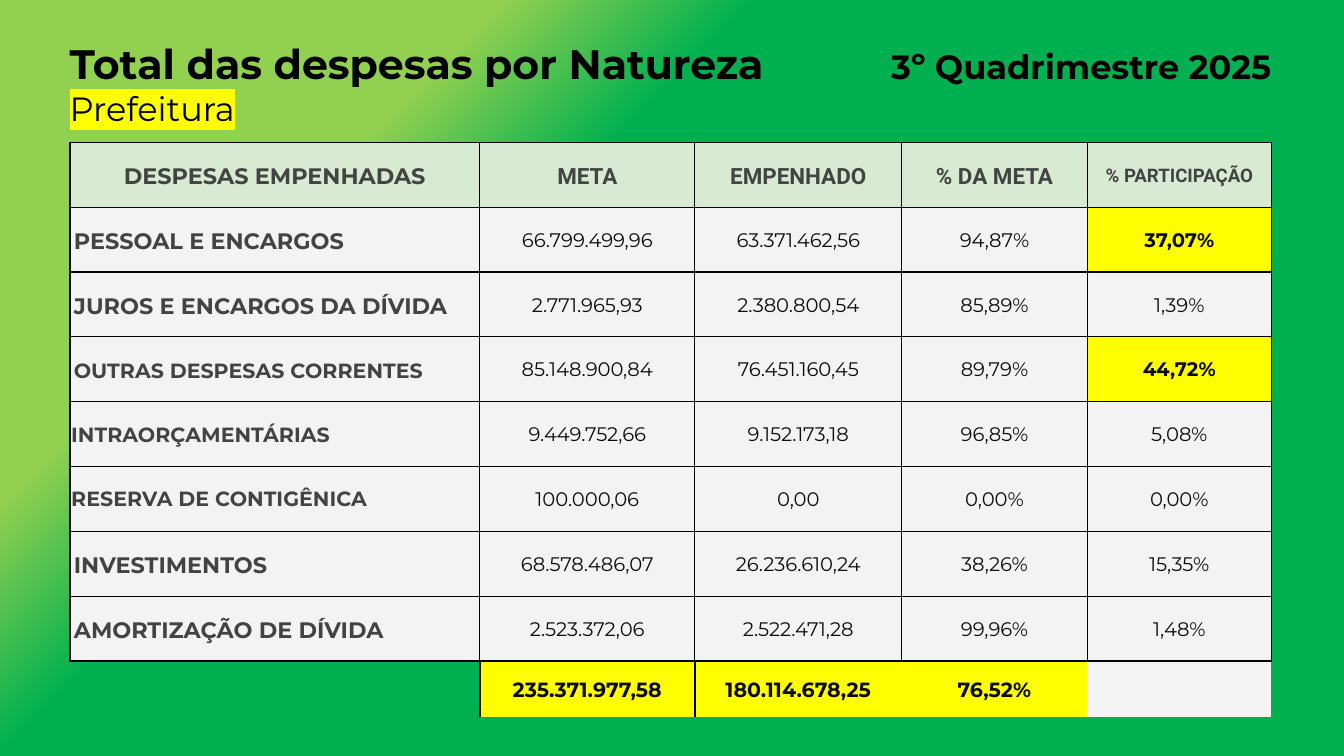
from lxml import etree
from pptx import Presentation
from pptx.dml.color import RGBColor
from pptx.enum.text import MSO_ANCHOR, PP_ALIGN
from pptx.oxml.ns import qn
from pptx.util import Inches, Pt

CENTER, LEFT = PP_ALIGN.CENTER, PP_ALIGN.LEFT
MIDDLE, BOTTOM = MSO_ANCHOR.MIDDLE, MSO_ANCHOR.BOTTOM

TITLE = "Total das despesas por Natureza"
PERIOD = "3º Quadrimestre 2025"
ENTITY = "Prefeitura"

HEADER = ["DESPESAS EMPENHADAS", "META", "EMPENHADO", "% DA META", "% PARTICIPAÇÃO"]
EXPENSES = [
    ("PESSOAL E ENCARGOS", "66.799.499,96", "63.371.462,56", "94,87%", "37,07%"),
    ("JUROS E ENCARGOS DA DÍVIDA", "2.771.965,93", "2.380.800,54", "85,89%", "1,39%"),
    ("OUTRAS DESPESAS CORRENTES", "85.148.900,84", "76.451.160,45", "89,79%", "44,72%"),
    ("INTRAORÇAMENTÁRIAS", "9.449.752,66", "9.152.173,18", "96,85%", "5,08%"),
    ("RESERVA DE CONTIGÊNICA", "100.000,06", "0,00", "0,00%", "0,00%"),
    ("INVESTIMENTOS", "68.578.486,07", "26.236.610,24", "38,26%", "15,35%"),
    ("AMORTIZAÇÃO DE DÍVIDA", "2.523.372,06", "2.522.471,28", "99,96%", "1,48%"),
]
TOTALS = ["", "235.371.977,58", "180.114.678,25", "76,52%", ""]
HIGHLIGHTED = {"37,07%", "44,72%"}
SMALL_LABELS = {"OUTRAS DESPESAS CORRENTES", "INTRAORÇAMENTÁRIAS", "RESERVA DE CONTIGÊNICA"}
TIGHT_LABELS = {"INTRAORÇAMENTÁRIAS", "RESERVA DE CONTIGÊNICA"}

COL_WIDTHS = [3.05, 1.6, 1.54, 1.38, 1.37]
TABLE_HEIGHT, TOTAL_HEIGHT = 4.28, 0.42
LOOSE, TIGHT = (0.03, 0.02, 0.03, 0.02), (0.01, 0.01, 0.01, 0)

THEME = {
    "font": "Montserrat", "head_font": "Roboto",
    "black": "000000", "label": "434343", "value": "0D0D0D",
    "lime": "92D050", "green": "00B050", "yellow": "FFFF00",
    "head_fill": "D9EAD3", "cell_fill": "F3F3F3",
    "title": 22, "period": 18, "head": 12, "head_small": 10,
    "label_size": 12, "label_small": 11, "value_size": 10.5, "total": 11,
}


def rgb(name):
    return RGBColor.from_string(THEME[name])


def add_run(p, text, size, color="black", bold=False, font="font", mark=False):
    r = p.add_run()
    r.text = text
    f = r.font
    f.size, f.bold, f.name = Pt(THEME[size]), bold, THEME[font]
    f.color.rgb = rgb(color)
    if mark:
        highlight = etree.Element(qn("a:highlight"))
        etree.SubElement(highlight, qn("a:srgbClr"), val=THEME["yellow"])
        r._r.rPr.find(qn("a:solidFill")).addnext(highlight)


def set_borders(cell, widths):
    tc_pr = cell._tc.get_or_add_tcPr()
    for i, side in enumerate("LRTB"):
        width = widths.get(side, 0)
        ln = etree.Element(qn(f"a:ln{side}"), w=str(Pt(width)))
        if width:
            fill = etree.SubElement(ln, qn("a:solidFill"))
            etree.SubElement(fill, qn("a:srgbClr"), val=THEME["black"])
        else:
            etree.SubElement(ln, qn("a:noFill"))
        tc_pr.insert(i, ln)


def fill_cell(cell, text, margins, fill, borders, align=CENTER, spacing=None, **style):
    cell.margin_left, cell.margin_top, cell.margin_right, cell.margin_bottom = map(Inches, margins)
    cell.vertical_anchor = MIDDLE
    if fill:
        cell.fill.solid()
        cell.fill.fore_color.rgb = rgb(fill)
    else:
        cell.fill.background()
    set_borders(cell, borders)
    p = cell.text_frame.paragraphs[0]
    p.alignment = align
    if spacing:
        p.line_spacing = spacing
    if text:
        add_run(p, text, **style)


def add_title(s):
    tf = s.shapes.add_textbox(Inches(0.42), Inches(0.19), Inches(9.25), Inches(0.81)).text_frame
    tf.word_wrap = True
    tf.vertical_anchor = BOTTOM
    p = tf.paragraphs[0]
    tabs = etree.SubElement(p._p.get_or_add_pPr(), qn("a:tabLst"))
    etree.SubElement(tabs, qn("a:tab"), pos=str(Inches(8.94)), algn="r")
    add_run(p, TITLE + "\t", "title", bold=True)
    add_run(p, PERIOD, "period", bold=True)
    p.add_line_break()
    add_run(p, ENTITY, "period", mark=True)


def add_expense_table(s):
    body_rows = len(EXPENSES) + 1
    heights = [(TABLE_HEIGHT - TOTAL_HEIGHT) / body_rows] * body_rows + [TOTAL_HEIGHT]
    table = s.shapes.add_table(
        len(heights), len(COL_WIDTHS), Inches(0.52), Inches(1.06),
        Inches(sum(COL_WIDTHS)), Inches(TABLE_HEIGHT)).table
    table.first_row = table.horz_banding = False
    for col, width in zip(table.columns, COL_WIDTHS):
        col.width = Inches(width)
    for row, height in zip(table.rows, heights):
        row.height = Inches(height)

    grid = dict.fromkeys("LRTB", 0.75)
    last = len(HEADER) - 1
    for c, text in enumerate(HEADER):
        fill_cell(table.cell(0, c), text, LOOSE, "head_fill", grid, spacing=1.15,
                  size="head_small" if c == last else "head", color="label", bold=True,
                  font="head_font" if c else "font")

    for r, (label, *values) in enumerate(EXPENSES, 1):
        tight = label in TIGHT_LABELS
        fill_cell(table.cell(r, 0), label, TIGHT if tight else LOOSE, "cell_fill", grid,
                  align=LEFT, spacing=None if tight else 1.15,
                  size="label_small" if label in SMALL_LABELS else "label_size",
                  color="label", bold=True)
        for c, text in enumerate(values, 1):
            marked = text in HIGHLIGHTED
            fill_cell(table.cell(r, c), text, TIGHT, "yellow" if marked else "cell_fill", grid,
                      size="value_size", color="value", bold=marked, mark=marked)

    fills = [None, "yellow", "yellow", "yellow", "cell_fill"]
    sides = [{"R": 1}, {"L": 1, "R": 1}, {"L": 1}, {}, {}]
    for c, (text, fill, side) in enumerate(zip(TOTALS, fills, sides)):
        fill_cell(table.cell(body_rows, c), text, TIGHT, fill, {"T": 0.75, **side},
                  size="total", color="value", bold=True, mark=True)


def main():
    prs = Presentation()
    prs.slide_width = Inches(10)
    prs.slide_height = prs.slide_width * 9 // 16
    s = prs.slides.add_slide(prs.slide_layouts[6])
    background = s.background.fill
    background.gradient()
    background.gradient_angle = 315
    for stop, position, color in zip(background.gradient_stops, (0.24, 0.36), ("lime", "green")):
        stop.position = position
        stop.color.rgb = rgb(color)
    add_title(s)
    add_expense_table(s)
    prs.save("out.pptx")


if __name__ == "__main__":
    main()
